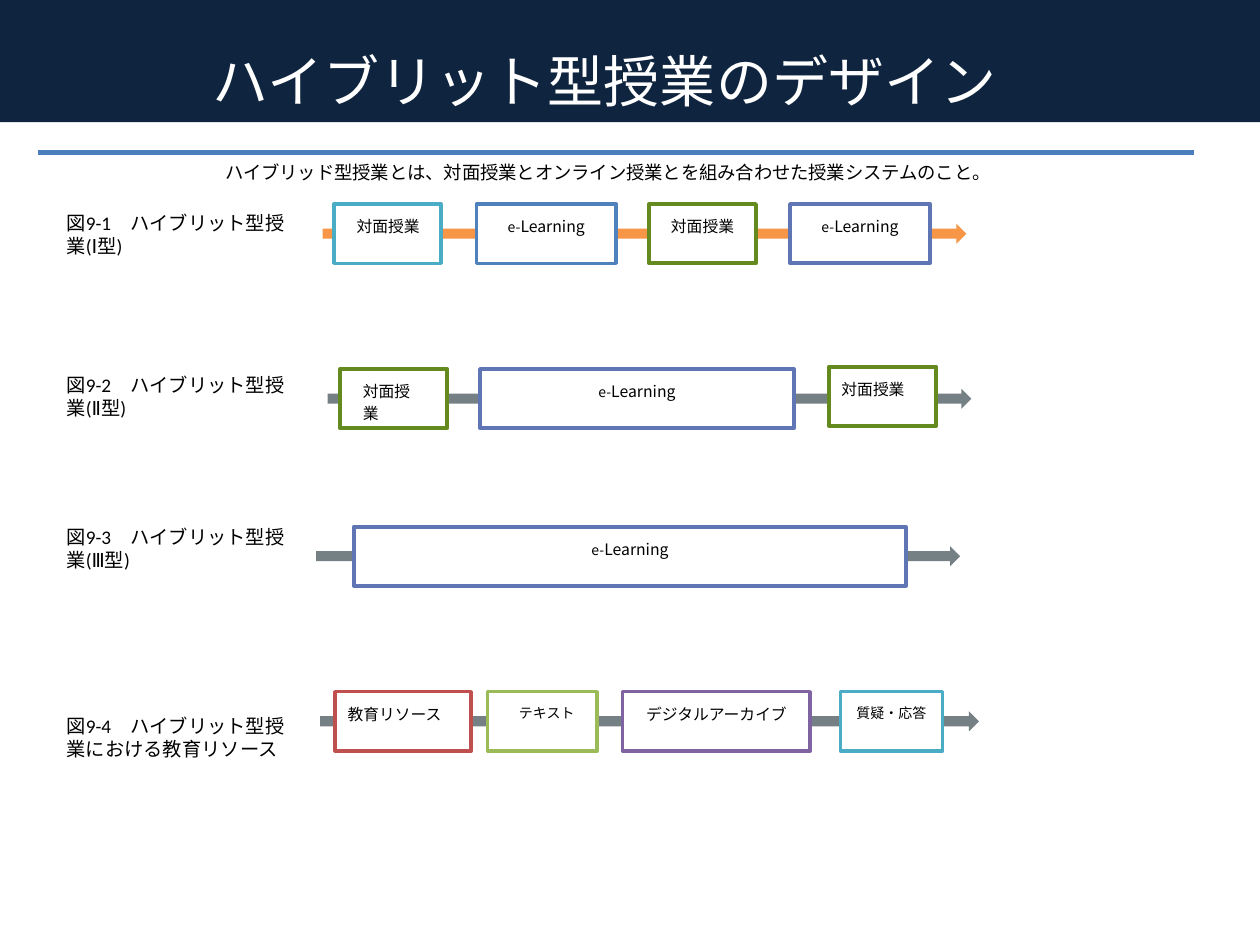
from dataclasses import dataclass

from lxml import etree
from pptx import Presentation
from pptx import util as u
from pptx.dml.color import RGBColor
from pptx.enum import shapes, text
from pptx.oxml import ns


@dataclass(frozen=True)
class Theme:
    # Colours
    navy: str = "0F243E"
    white: str = "FFFFFF"
    black: str = "000000"
    rule: str = "4B7EBC"
    orange: str = "F79646"
    gray: str = "758085"
    teal: str = "4BACC6"
    blue: str = "4F81BD"
    indigo: str = "6076B4"
    green: str = "63891F"
    red: str = "C0504D"
    lime: str = "9BBB59"
    purple: str = "8064A2"
    # Fonts and sizes
    sans: str = "Calibri"
    serif: str = "TeX Gyre Pagella"
    cjk: str = "Noto Sans CJK JP"
    title: float = 32
    lead: float = 10.5
    caption: float = 11
    label: float = 9
    small: float = 8


T = Theme()
LEFT, CENTER = text.PP_ALIGN.LEFT, text.PP_ALIGN.CENTER


def rgb(value):
    return RGBColor.from_string(value)


def inches(box):
    return [u.Inches(v) for v in box]


def format_run(r, font, size, color=T.black):
    r.font.name, r.font.size = font, u.Pt(size)
    r.font.color.rgb = rgb(color)


def set_margins(tf, left=0.1, top=0.05, right=0.1, bottom=0.05):
    tf.margin_left, tf.margin_top, tf.margin_right, tf.margin_bottom = inches(
        (left, top, right, bottom))


def add_block(parent, kind, box, fill, line=None, weight=2):
    sp = parent.add_shape(kind, *inches(box))
    sp.shadow.inherit = False
    sp.fill.solid()
    sp.fill.fore_color.rgb = rgb(fill)
    if line:
        sp.line.color.rgb = rgb(line)
        sp.line.width = u.Pt(weight)
    else:
        sp.line.fill.background()
    return sp


def add_note(slide, box, words, size):
    tf = slide.shapes.add_textbox(*inches(box)).text_frame
    tf.word_wrap = True
    tf.text = words
    format_run(tf.paragraphs[0].runs[0], T.sans, size)


def add_header(slide, box):
    """Title band, with the rule and the lead sentence below it."""
    left, top, width, height = box
    sp = slide.shapes.title
    sp.left, sp.top, sp.width, sp.height = inches(box)
    sp.fill.solid()
    sp.fill.fore_color.rgb = rgb(T.navy)
    tf = sp.text_frame
    tf.text = "ハイブリット型授業のデザイン"
    tf.auto_size = text.MSO_AUTO_SIZE.NONE
    tf.vertical_anchor = text.MSO_ANCHOR.MIDDLE
    set_margins(tf, top=0.36, right=0.54)
    tf.paragraphs[0].alignment = CENTER
    format_run(tf.paragraphs[0].runs[0], T.cjk, T.title, T.white)

    y = u.Inches(top + height + 0.24)
    rule = slide.shapes.add_connector(
        shapes.MSO_CONNECTOR.STRAIGHT, u.Inches(left + 0.3), y, u.Inches(left + 9.48), y)
    rule.line.color.rgb = rgb(T.rule)
    rule.line.width = u.Pt(3)
    etree.SubElement(rule._element.spPr, ns.qn("a:effectLst"))

    add_note(slide, (left + 1.69, top + height + 0.26, 7.12, 0.28),
             "ハイブリッド型授業とは、対面授業とオンライン授業とを組み合わせた授業システムのこと。",
             T.lead)


@dataclass
class Step:
    x: float  # offset from the start of the lane
    width: float
    color: str
    runs: list  # (words, font, size)
    weight: float = 2.25
    align: int = CENTER
    inset: tuple = (0.1, 0.1)  # left, right
    dy: float = 0


def face_to_face(x, color=T.green, **options):
    return Step(x, 0.85, color, [("対面授業", T.serif, T.label)], **options)


def e_learning(x, width=1.11, color=T.indigo, **options):
    return Step(x, width, color,
                [("e-", T.cjk, T.small), ("Learning", T.cjk, T.label)], **options)


def resource(x, width, color, words, font=T.sans, size=T.label, **options):
    return Step(x, width, color, [(words, font, size)], weight=2, **options)


def add_lane(slide, box, color, steps):
    """A timeline arrow with its steps standing on it."""
    left, top, width, height = box
    group = slide.shapes.add_group_shape().shapes
    arrow_h = 0.16
    add_block(group, shapes.MSO_SHAPE.RIGHT_ARROW,
              (left, top + (height - arrow_h) / 2, width, arrow_h), color)
    for step in steps:
        sp = add_block(group, shapes.MSO_SHAPE.RECTANGLE,
                       (left + step.x, top + step.dy, step.width, height),
                       T.white, step.color, step.weight)
        tf = sp.text_frame
        tf.word_wrap = True
        tf.vertical_anchor = text.MSO_ANCHOR.TOP
        set_margins(tf, left=step.inset[0], top=0.08, right=step.inset[1])
        p = tf.paragraphs[0]
        p.alignment, p.line_spacing, p.space_after = step.align, 1.15, u.Pt(10)
        for words, font, size in step.runs:
            r = p.add_run()
            r.text = words
            format_run(r, font, size)


# Caption, caption top and height, lane box, arrow colour, steps
LANES = [
    ("図9-1\u3000ハイブリット型授業(Ⅰ型)".replace("\u3000", "　"), 1.63, 0.47,
     (2.56, 1.62, 5.11, 0.47), T.orange,
     [face_to_face(0.09, T.teal, weight=2, align=LEFT, inset=(0.18, 0.1)),
      e_learning(1.22, color=T.blue, weight=2),
      face_to_face(2.59),
      e_learning(3.71)]),
    ("図9-2　ハイブリット型授業(Ⅱ型)", 2.91, 0.47,
     (2.6, 2.93, 5.11, 0.47), T.gray,
     [face_to_face(0.1, align=LEFT, inset=(0.18, 0.2)),
      e_learning(1.21, 2.49),
      face_to_face(3.98, align=LEFT, dy=-0.02)]),
    ("図9-3　ハイブリット型授業(Ⅲ型)", 4.12, 0.47,
     (2.51, 4.18, 5.11, 0.47), T.gray,
     [e_learning(0.3, 4.38)]),
    ("図9-4　ハイブリット型授業における教育リソース", 5.62, 0.66,
     (2.54, 5.49, 5.23, 0.47), T.gray,
     [resource(0.12, 1.08, T.red, "教育リソース", align=LEFT),
      resource(1.33, 0.87, T.lime, "テキスト", T.serif, T.small, inset=(0.17, 0.1)),
      resource(2.4, 1.49, T.purple, "デジタルアーカイブ"),
      resource(4.13, 0.81, T.teal, "質疑・応答", T.serif, T.small)]),
]


def main():
    prs = Presentation()
    prs.slide_width, prs.slide_height = u.Inches(10), u.Inches(7.5)
    slide = prs.slides.add_slide(prs.slide_layouts[5])
    add_header(slide, (0, -0.01, 10.04, 0.98))
    for caption, top, height, lane, color, steps in LANES:
        add_lane(slide, lane, color, steps)
        add_note(slide, (0.43, top, 1.93, height), caption, T.caption)
    prs.save("out.pptx")


if __name__ == "__main__":
    main()
